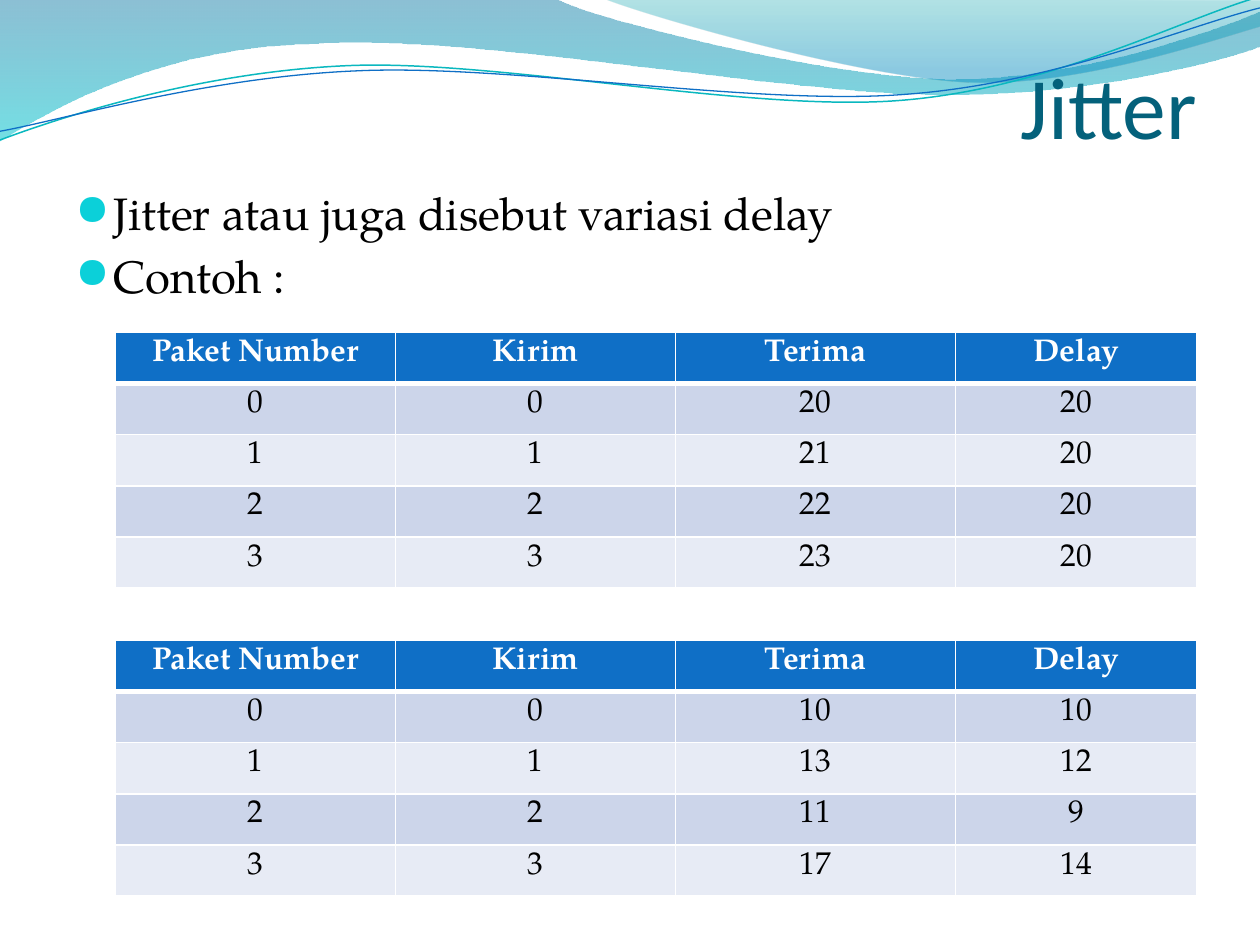
from dataclasses import dataclass

from lxml import etree
from pptx import Presentation
from pptx.dml.color import RGBColor
from pptx.enum.text import MSO_ANCHOR, PP_ALIGN
from pptx.oxml.ns import qn
from pptx.util import Pt

LEFT, CENTER, RIGHT = PP_ALIGN.LEFT, PP_ALIGN.CENTER, PP_ALIGN.RIGHT
TOP, BOTTOM = MSO_ANCHOR.TOP, MSO_ANCHOR.BOTTOM


@dataclass(frozen=True)
class Theme:
    heading_font: str = "Calibri"
    body_font: str = "TeX Gyre Pagella"
    title_size: float = 50
    body_size: float = 26
    table_size: float = 18
    title: str = "04617B"
    text: str = "000000"
    white: str = "FFFFFF"
    bullet: str = "0BD0D9"
    header: str = "0F6FC6"
    bands: tuple = ("CCD5EA", "E7EBF5")
    # Gradient stops: position %, colour, opacity %
    wide_wave: tuple = ((0, "0074A1", 45), (100, "00C6CF", 55))
    right_wave: tuple = ((0, "00A1A9", 30), (80, "008BBF", 45))
    teal_line: str = "0AB8BF"
    blue_line: str = "0F6FC6"


THEME = Theme()

# Outlines in points: a start, then segments of one point (line) or three (curve)
WIDE_WAVE = ((0, 0), [
    [(317, -1)],
    [(343, 12), (478, 45), (546, 45)],
    [(614, 45), (690, 19), (720, 6.5)],
    [(721, 26)],
    [(708, 32), (626, 55), (537, 54)],
    [(448, 54), (275, 20), (185, 24.5)],
    [(93, 26), (33, 60), (-1, 81)],
])
RIGHT_WAVE = ((345, -1), [
    [(366.5, 8), (491, 44.5), (554, 47)],
    [(616, 49.5), (692, 23), (720, 15)],
    [(720, 0)],
])
TEAL_LINE = ((0, 80), [
    [(34.5, 67), (114, 41), (199.5, 37.5)],
    [(284.5, 34), (427, 64), (513, 57.5)],
    [(600, 51), (675, 11), (718.5, -1.5)],
])
BLUE_LINE = ((0, 75), [
    [(34, 69), (118, 44), (204, 40.5)],
    [(290, 36.5), (430, 60.5), (516, 54)],
    [(602, 48), (677.5, 15), (720, 4.5)],
])

PACKET_HEADINGS = ["Paket Number", "Kirim", "Terima"]
DELAY_HEADINGS = ["Delay"]
STEADY = [(0, 0, 20, 20), (1, 1, 21, 20), (2, 2, 22, 20), (3, 3, 23, 20)]
VARYING = [(0, 0, 10, 10), (1, 1, 13, 12), (2, 2, 11, 9), (3, 3, 17, 14)]


def write(paragraph, text, *, size, color, font=THEME.body_font, bold=False, align=LEFT):
    paragraph.alignment = align
    run = paragraph.add_run()
    run.text = text
    run.font.name = font
    run.font.size = Pt(size)
    run.font.bold = bold
    run.font.color.rgb = RGBColor.from_string(color)


def text_frame(slide, box, insets, anchor):
    frame = slide.shapes.add_textbox(*map(Pt, box)).text_frame
    frame.word_wrap = True
    frame.vertical_anchor = anchor
    (frame.margin_left, frame.margin_top,
     frame.margin_right, frame.margin_bottom) = map(Pt, insets)
    return frame


def add_outline(slide, origin, outline, close):
    start, segments = outline
    builder = slide.shapes.build_freeform(Pt(start[0]), Pt(start[1]))
    points = [(Pt(x), Pt(y)) for segment in segments for x, y in segment]
    builder.add_line_segments(points, close=close)
    shape = builder.convert_to_shape(*map(Pt, origin))
    shape.shadow.inherit = False
    # Turn each run of three points into one Bezier curve
    lines = iter(list(shape._element.iter(qn("a:lnTo"))))
    for segment in segments:
        steps = [next(lines) for _ in segment]
        if len(steps) == 3:
            curve = etree.Element(qn("a:cubicBezTo"))
            steps[0].addprevious(curve)
            for step in steps:
                curve.append(step[0])
                step.getparent().remove(step)
    return shape


def add_wave(slide, origin, outline, stops):
    wave = add_outline(slide, origin, outline, close=True)
    wave.line.fill.background()
    wave.fill.gradient()
    wave.fill.gradient_angle = 270
    for stop, (position, color, opacity) in zip(wave.fill.gradient_stops, stops):
        stop.color.rgb = RGBColor.from_string(color)
        stop.position = position / 100
    for gs, (_, _, opacity) in zip(wave._element.iter(qn("a:gs")), stops):
        etree.SubElement(gs[0], qn("a:alpha"), val=str(opacity * 1000))


def add_wave_line(slide, origin, outline, color, width):
    stroke = add_outline(slide, origin, outline, close=False)
    stroke.fill.background()
    stroke.line.color.rgb = RGBColor.from_string(color)
    stroke.line.width = Pt(width)


def add_wave_banner(slide, origin):
    add_wave(slide, origin, WIDE_WAVE, THEME.wide_wave)
    add_wave(slide, origin, RIGHT_WAVE, THEME.right_wave)
    add_wave_line(slide, origin, TEAL_LINE, THEME.teal_line, 0.85)
    add_wave_line(slide, origin, BLUE_LINE, THEME.blue_line, 0.75)


def add_title(slide, box, title):
    frame = text_frame(slide, box, (0, 3.6, 0, 0), BOTTOM)
    write(frame.paragraphs[0], title, size=THEME.title_size, color=THEME.title,
          font=THEME.heading_font, align=RIGHT)


def add_bullets(slide, box, points):
    frame = text_frame(slide, box, (7.2, 3.6, 7.2, 3.6), TOP)
    for index, point in enumerate(points):
        paragraph = frame.add_paragraph() if index else frame.paragraphs[0]
        write(paragraph, point, size=THEME.body_size, color=THEME.text)
        paragraph.space_before = Pt(5.2)
        properties = paragraph._p.get_or_add_pPr()
        properties.set("marL", str(Pt(21.6)))
        properties.set("indent", str(Pt(-21.6)))
        bullet_color = etree.SubElement(properties, qn("a:buClr"))
        etree.SubElement(bullet_color, qn("a:srgbClr"), val=THEME.bullet)
        etree.SubElement(properties, qn("a:buSzPct"), val="95000")
        etree.SubElement(properties, qn("a:buChar"), char="●")


def set_borders(cell, **widths):
    properties = cell._tc.get_or_add_tcPr()
    for side in "LRTB":
        border = etree.SubElement(properties, qn(f"a:ln{side}"), w=str(Pt(widths.get(side, 1))))
        fill = etree.SubElement(border, qn("a:solidFill"))
        etree.SubElement(fill, qn("a:srgbClr"), val=THEME.white)


def add_packet_table(slide, box, headings, records):
    rows = [headings, *records]
    table = slide.shapes.add_table(len(rows), len(headings), *map(Pt, box)).table
    for column in table.columns:
        column.width = Pt(box[2] / len(headings))
    for r, values in enumerate(rows):
        table.rows[r].height = Pt(box[3] / len(rows))
        is_header = r == 0
        for c, value in enumerate(values):
            cell = table.cell(r, c)
            set_borders(cell, T=3 if r == 1 else 1, B=3 if is_header else 1)
            cell.fill.solid()
            cell.fill.fore_color.rgb = RGBColor.from_string(
                THEME.header if is_header else THEME.bands[(r - 1) % 2])
            write(cell.text_frame.paragraphs[0], str(value), size=THEME.table_size,
                  color=THEME.white if is_header else THEME.text,
                  bold=is_header, align=CENTER)


def add_packet_example(slide, box, records):
    left, top, width, height = box
    packet_width = 480
    add_packet_table(slide, (left, top, packet_width, height), PACKET_HEADINGS,
                     [record[:3] for record in records])
    add_packet_table(slide, (left + packet_width, top, width - packet_width, height),
                     DELAY_HEADINGS, [record[3:] for record in records])


def main():
    presentation = Presentation()
    presentation.slide_width, presentation.slide_height = Pt(720), Pt(540)
    slide = presentation.slides.add_slide(presentation.slide_layouts[6])
    add_wave_banner(slide, (0, 0))
    add_title(slide, (36, 0, 648, 90), "Jitter")
    add_bullets(slide, (36, 102, 648, 396),
                ["Jitter atau juga disebut variasi delay", "Contoh :"])
    for top, records in ((190, STEADY), (366, VARYING)):
        add_packet_example(slide, (66, top, 618, 146), records)
    presentation.save("out.pptx")


if __name__ == "__main__":
    main()
